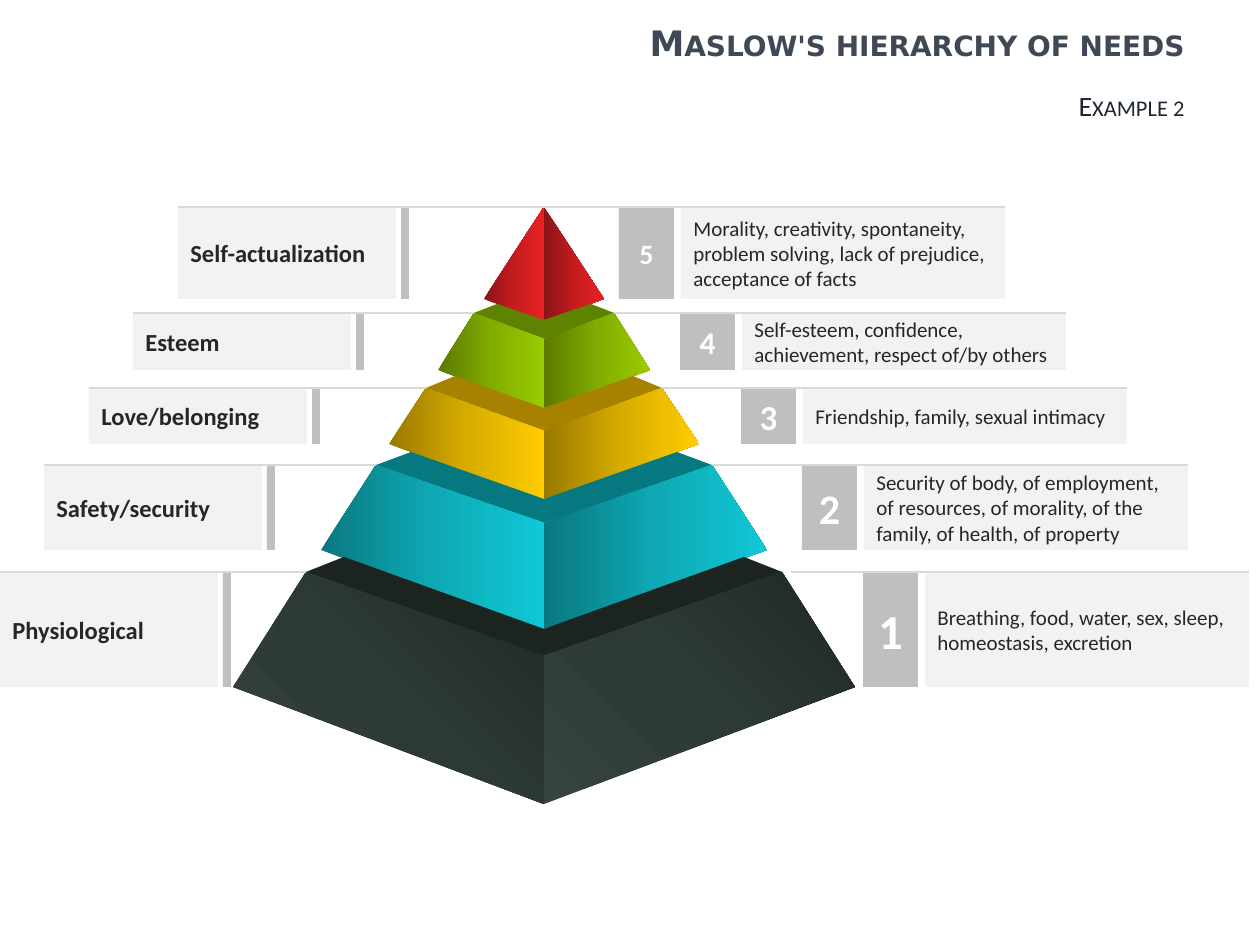
from pptx import Presentation
from pptx.dml.color import RGBColor
from pptx.enum.shapes import MSO_CONNECTOR, MSO_SHAPE
from pptx.enum.text import MSO_ANCHOR, PP_ALIGN
from pptx.oxml import parse_xml
from pptx.oxml.ns import nsdecls, qn
from pptx.util import Pt
from lxml import etree

HEADINGS = [
    ("Maslow's hierarchy of needs", 0, 86,
     dict(size=Pt(20), name="DejaVu Sans", bold=True), "3F4855"),
    ("Example 2", 86, 39, dict(size=Pt(16), name="Calibri"), "1D2631"),
]
LEVELS = [
    ("Self-actualization", "Morality, creativity, spontaneity, problem solving, "
     "lack of prejudice, acceptance of facts", 16),
    ("Esteem", "Self-esteem, confidence, achievement, respect of/by others", 18),
    ("Love/belonging", "Friendship, family, sexual intimacy", 20),
    ("Safety/security", "Security of body, of employment, of resources, "
     "of morality, of the family, of health, of property", 24),
    ("Physiological", "Breathing, food, water, sex, sleep, homeostasis, excretion", 28),
]
TIERS = [
    dict(top=(0, 207), ridge=207, base=(60, 299), foot=320, back=None, rule=0,
         lid=None, stops=("8A1415", "C41C1E", "E92123")),
    dict(top=(70, 313), ridge=339, base=(106, 370), foot=408, back=(47, 304), rule=70,
         lid="5E8300", stops=("5B7900", "81AC00", "99CC00")),
    dict(top=(118, 388), ridge=431, base=(155, 444), foot=499, back=(89, 376), rule=118,
         lid="A68200", stops=("977900", "D7AC00", "FFCC00")),
    dict(top=(168, 465), ridge=523, base=(223, 550), foot=629, back=(133, 452), rule=168,
         lid="057880", stops=("0A777F", "0EA9B4", "10C8D6")),
    dict(top=(238, 572), ridge=656, base=(311, 687), foot=804, back=(200, 557), rule=247,
         lid="1B241F", stops=("1F2824", "2D3933", "35443C")),
]
AXIS = 544
PX = 914400 / 126
LINEAR = '<a:lin ang="0" scaled="0"/>'
CORNER = '<a:path path="circle"><a:fillToRect l="100000" b="100000"/></a:path>'


def px(n):
    return round(n * PX)


def rgb(color):
    return RGBColor.from_string(color)


def paint(s, color):
    s.fill.solid()
    s.fill.fore_color.rgb = rgb(color)
    s.line.fill.background()
    s.shadow.inherit = False


def shade(s, stops, direction):
    paint(s, stops[0])
    marks = "".join(f'<a:gs pos="{i * 50000}"><a:srgbClr val="{c}"/></a:gs>'
                    for i, c in enumerate(stops))
    old = s._element.spPr.find(qn("a:solidFill"))
    old.getparent().replace(old, parse_xml(
        f'<a:gradFill {nsdecls("a")}><a:gsLst>{marks}</a:gsLst>{direction}</a:gradFill>'))


def write(s, text, color, font, align=PP_ALIGN.LEFT):
    tf = s.text_frame
    tf.word_wrap = True
    tf.vertical_anchor = MSO_ANCHOR.MIDDLE
    p = tf.paragraphs[0]
    p.alignment = align
    r = p.add_run()
    r.text = text
    for key, value in font.items():
        setattr(r.font, key, value)
    r.font.color.rgb = rgb(color)
    return r


def polygon(shapes, side, points):
    points = [(px(AXIS + side * x), px(y)) for x, y in points]
    fb = shapes.build_freeform(*points[0])
    fb.add_line_segments(points[1:], close=True)
    return fb.convert_to_shape()


def box(x, y, w, h, color):
    s = slide.shapes.add_shape(MSO_SHAPE.RECTANGLE, px(x), px(y), px(w), px(h))
    paint(s, color)
    return s


def rule(x1, x2, y):
    s = slide.shapes.add_connector(MSO_CONNECTOR.STRAIGHT, px(x1), px(y), px(x2), px(y))
    s.line.color.rgb = rgb("D9D9D9")
    s.line.width = Pt(0.75)
    etree.SubElement(s._element.spPr, qn("a:effectLst"))


prs = Presentation()
prs.slide_width, prs.slide_height = px(1260), px(945)
slide = prs.slides.add_slide(prs.slide_layouts[6])

pyramid = slide.shapes.add_group_shape().shapes
for i, t in enumerate(TIERS):
    direction = CORNER if t is TIERS[-1] else LINEAR
    for side in (-1, 1):
        if t["lid"]:
            paint(polygon(pyramid, side, [(0, TIERS[i - 1]["foot"]), (0, t["ridge"]),
                                          t["top"], t["back"]]), t["lid"])
        face = [(0, t["ridge"]), (0, t["foot"]), t["base"]]
        if t["top"][0]:
            face.append(t["top"])
        shade(polygon(pyramid, side, face), t["stops"], direction)

for i, ((need, details, size), t) in enumerate(zip(LEVELS, TIERS)):
    y = t["top"][1]
    h = t["base"][1] - y
    left = 178 * (4 - i) // 4
    right = 619 + 61 * i
    write(box(right + 62, y, 324, h, "F2F2F2"), details, "262626",
          dict(size=Pt(12), name="Calibri"))
    write(box(left, y, 218, h, "F2F2F2"), need, "262626",
          dict(size=Pt(14), name="Calibri", bold=True))
    write(box(right, y, 55, h, "BFBFBF"), str(5 - i), "FFFFFF",
          dict(size=Pt(size), name="Calibri", bold=True), PP_ALIGN.CENTER)
    box(left + 223, y, 8, h, "BFBFBF")
    rule(AXIS - t["top"][0], left, y)
    rule(AXIS + t["rule"], right + 386, y)

for text, y, h, font, color in HEADINGS:
    s = slide.shapes.add_textbox(px(402), px(y), px(795), px(h))
    r = write(s, text, color, font, PP_ALIGN.RIGHT)
    r._r.get_or_add_rPr().set("cap", "small")

prs.save("out.pptx")
